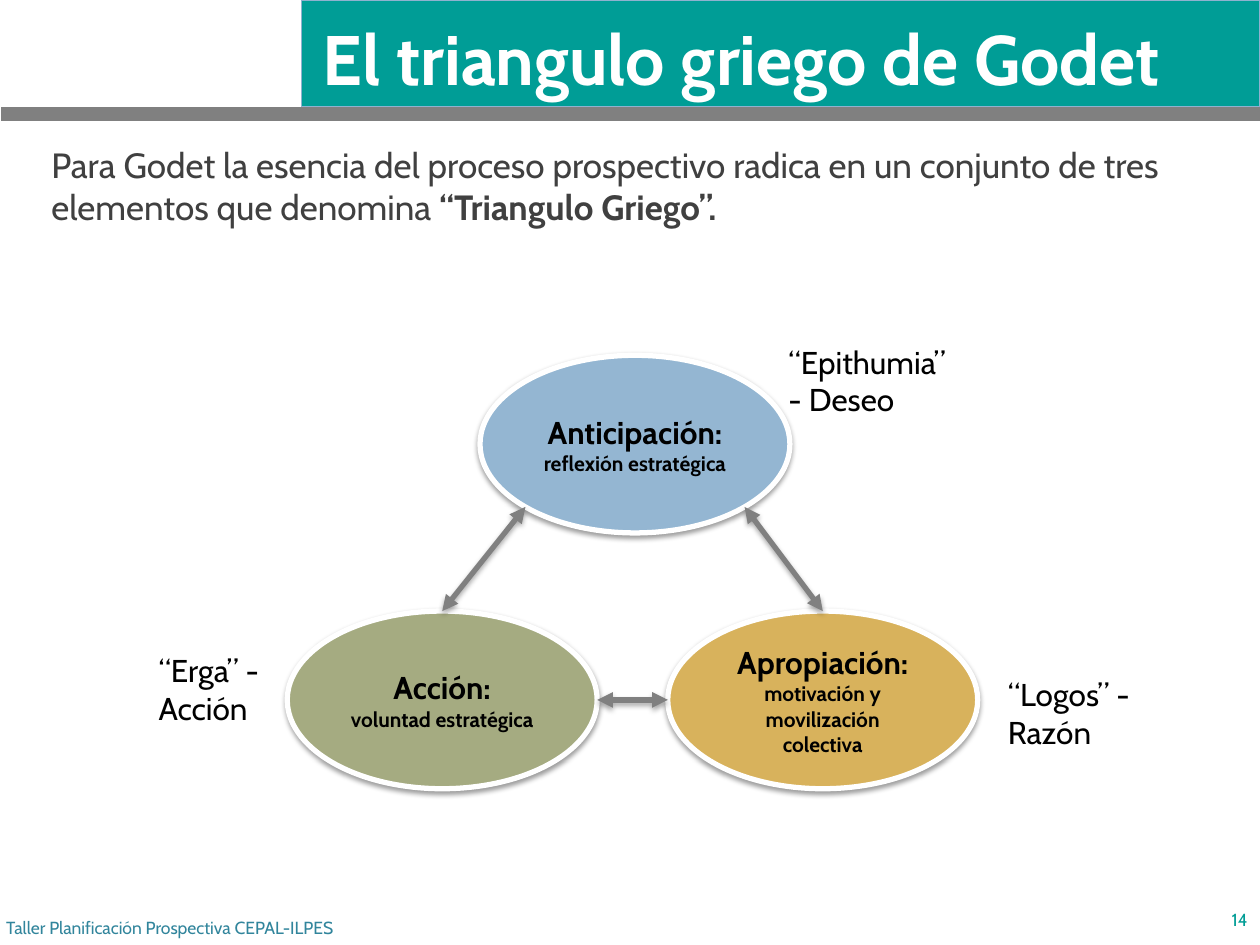
from math import sqrt

from lxml import etree
from pptx import Presentation
from pptx.dml.color import RGBColor
from pptx.enum import shapes, text
from pptx.oxml.ns import qn
from pptx.util import Inches, Pt

TEAL = RGBColor(0x00, 0x9D, 0x96)
TEAL_EDGE = RGBColor(0x8F, 0xB2, 0xCF)
GRAY = RGBColor(0x80, 0x80, 0x80)
DARK = RGBColor(0x40, 0x40, 0x40)
BLUE = RGBColor(0x94, 0xB6, 0xD2)
GREEN = RGBColor(0xA5, 0xAB, 0x81)
GOLD = RGBColor(0xD8, 0xB2, 0x5C)
FOOTER_BLUE = RGBColor(0x31, 0x85, 0x9C)
WHITE = RGBColor(0xFF, 0xFF, 0xFF)
BLACK = RGBColor(0x00, 0x00, 0x00)
FONT = "Cabin"
MIDDLE, TOP = text.MSO_ANCHOR.MIDDLE, text.MSO_ANCHOR.TOP
LEFT, CENTER, RIGHT = text.PP_ALIGN.LEFT, text.PP_ALIGN.CENTER, text.PP_ALIGN.RIGHT

# Content: each paragraph is a list of (text, size, bold) runs
TITLE = [[("El triangulo griego de Godet", 40, True)]]
INTRO = [[
    ("Para Godet la esencia del proceso prospectivo radica en un conjunto de tres "
     "elementos que denomina ", 20, False),
    ("“Triangulo Griego”.", 20, True),
]]
FOOTER = [[("Taller Planificación Prospectiva CEPAL-ILPES", 10, False)]]
PAGE = [[("14", 10, False)]]

# Name, detail, fill, left, top
OVAL_W, OVAL_H = 2.46, 1.41
OVALS = [
    ("Anticipación:", "reflexión estratégica", BLUE, 3.81, 2.82),
    ("Acción:", "voluntad estratégica", GREEN, 2.28, 4.85),
    ("Apropiación:", "motivación y movilización colectiva", GOLD, 5.3, 4.85),
]
# Greek term, box
GREEK_TERMS = [
    ("“Logos” - Razón", (7.9, 5.31, 1.41, 0.71)),
    ("“Erga” - Acción", (1.16, 5.12, 1.41, 0.71)),
    ("“Epithumia” - Deseo", (6.16, 2.67, 1.6, 0.71)),
]

prs = Presentation()
prs.slide_width, prs.slide_height = Inches(10), Inches(7.5)
slide = prs.slides.add_slide(prs.slide_layouts[6])


def write(shape, paragraphs, color=BLACK, align=LEFT, anchor=TOP):
    frame = shape.text_frame
    frame.word_wrap = True
    frame.vertical_anchor = anchor
    for i, runs in enumerate(paragraphs):
        paragraph = frame.paragraphs[0] if i == 0 else frame.add_paragraph()
        paragraph.alignment = align
        for words, size, bold in runs:
            run = paragraph.add_run()
            run.text = words
            run.font.name, run.font.size, run.font.bold = FONT, Pt(size), bold
            run.font.color.rgb = color


def add_text(box, paragraphs, **layout):
    write(slide.shapes.add_textbox(*map(Inches, box)), paragraphs, **layout)


def add_filled(kind, box, fill, line=None, width=0.75):
    shape = slide.shapes.add_shape(kind, *map(Inches, box))
    shape.shadow.inherit = False
    shape.fill.solid()
    shape.fill.fore_color.rgb = fill
    if line is None:
        shape.line.fill.background()
    else:
        shape.line.color.rgb = line
        shape.line.width = Pt(width)
    return shape


def add_shadow(shape, opacity, distance):
    properties = shape._element.spPr
    effects = properties.find(qn("a:effectLst"))
    if effects is None:
        effects = etree.SubElement(properties, qn("a:effectLst"))
    shadow = etree.SubElement(effects, qn("a:outerShdw"), blurRad=str(Pt(3.1)),
                              dist=str(Pt(distance)), dir="5400000", rotWithShape="0")
    color = etree.SubElement(shadow, qn("a:srgbClr"), val=str(BLACK))
    etree.SubElement(color, qn("a:alpha"), val=str(opacity * 1000))


def add_double_arrow(start, end):
    arrow = slide.shapes.add_connector(shapes.MSO_CONNECTOR.STRAIGHT,
                                       *map(Inches, (*start, *end)))
    arrow.line.color.rgb = GRAY
    arrow.line.width = Pt(3)
    for tip in ("a:headEnd", "a:tailEnd"):
        etree.SubElement(arrow.line._get_or_add_ln(), qn(tip), type="triangle")
    add_shadow(arrow, 35, 1.8)


def oval_point(oval, across, down):
    """Point on an oval's edge; across and down run from -1 to 1 from its centre."""
    left, top = oval[3:]
    return left + OVAL_W / 2 * (1 + across), top + OVAL_H / 2 * (1 + down)


# Header band, title and introduction
add_filled(shapes.MSO_SHAPE.RECTANGLE, (2.39, 0, 7.61, 0.85), TEAL, TEAL_EDGE)
add_filled(shapes.MSO_SHAPE.RECTANGLE, (0.01, 0.85, 10, 0.11), GRAY)
add_text((2.46, -0.04, 7.41, 1), TITLE, color=WHITE, anchor=MIDDLE)
add_text((0.31, 1.09, 9, 0.83), INTRO, color=DARK)

# Triangle of ovals
for name, detail, fill, left, top in OVALS:
    oval = add_filled(shapes.MSO_SHAPE.OVAL, (left, top, OVAL_W, OVAL_H), fill, WHITE, 3)
    add_shadow(oval, 38, 1.6)
    write(oval, [[(name, 18, True)], [(detail, 12, True)]], align=CENTER, anchor=MIDDLE)

# Arrows between the ovals
anticipation, action, appropriation = OVALS
diagonal = 1 / sqrt(2)
add_double_arrow(oval_point(anticipation, -diagonal, diagonal), oval_point(action, 0, -1))
add_double_arrow(oval_point(anticipation, diagonal, diagonal), oval_point(appropriation, 0, -1))
add_double_arrow(oval_point(appropriation, -1, 0), oval_point(action, 1, 0))

# Footer and page number
add_text((-0.05, 7.16, 5.98, 0.4), FOOTER, color=FOOTER_BLUE, anchor=MIDDLE)
add_text((9.5, 7.1, 0.5, 0.4), PAGE, color=TEAL, align=RIGHT, anchor=MIDDLE)

# Greek terms beside the ovals
for term, box in GREEK_TERMS:
    add_text(box, [[(term, 18, False)]])

prs.save("out.pptx")
